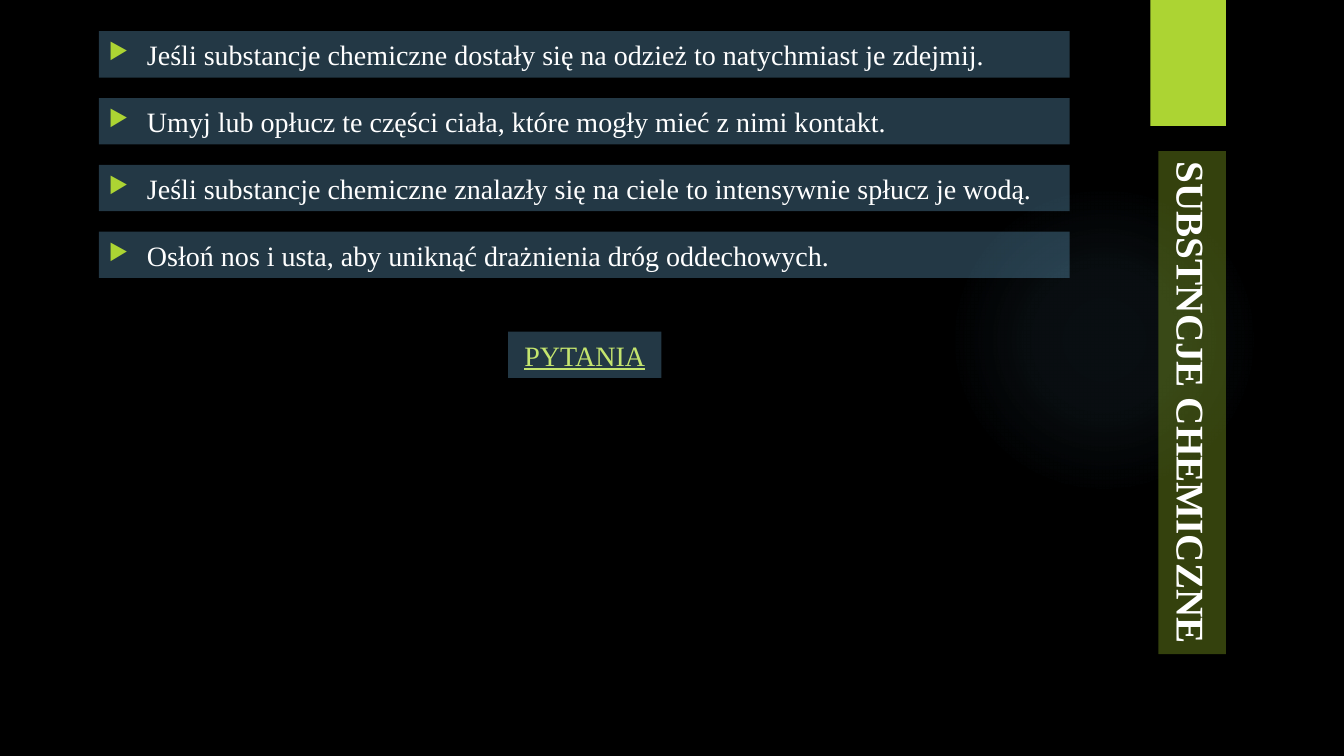
from lxml import etree
from pptx import Presentation
from pptx.dml.color import RGBColor
from pptx.enum.shapes import MSO_SHAPE
from pptx.enum.text import MSO_ANCHOR, PP_ALIGN
from pptx.oxml import parse_xml
from pptx.oxml.ns import qn
from pptx.util import Inches, Pt

RECTANGLE, OVAL = MSO_SHAPE.RECTANGLE, MSO_SHAPE.OVAL
LEFT, CENTER = PP_ALIGN.LEFT, PP_ALIGN.CENTER
MIDDLE = MSO_ANCHOR.MIDDLE
NAMESPACE = "http://schemas.openxmlformats.org/drawingml/2006/main"

COLORS = {
    "background": "000000",
    "blue": "7AC4F0",
    "lime": "ACD433",
    "olive": "83A322",
    "white": "FFFFFF",
    "link": "C4E46E",
}
BODY = {"name": "Times New Roman", "size": Pt(20)}
TITLE = {"name": "Times New Roman", "size": Pt(28), "bold": True}
LINK = {**BODY, "underline": True}

ADVICE = [
    "Jeśli substancje chemiczne dostały się na odzież to natychmiast je zdejmij.",
    "Umyj lub opłucz te części ciała, które mogły mieć z nimi kontakt.",
    "Jeśli substancje chemiczne znalazły się na ciele to intensywnie spłucz je wodą.",
    "Osłoń nos i usta, aby uniknąć drażnienia dróg oddechowych.",
]
ADVICE_TOP, ADVICE_PITCH = 0.31, 0.663

deck = Presentation()
deck.slide_width, deck.slide_height = Inches(13.33), Inches(7.5)
page = deck.slides.add_slide(deck.slide_layouts[6])
page.background.fill.solid()
page.background.fill.fore_color.rgb = RGBColor.from_string(COLORS["background"])


def add_box(kind, left, top, width, height, color, opacity=100):
    """Add a borderless shape; opacity is in percent."""
    box = page.shapes.add_shape(
        kind, Inches(left), Inches(top), Inches(width), Inches(height))
    box.shadow.inherit = False
    box.line.fill.background()
    box.fill.solid()
    box.fill.fore_color.rgb = RGBColor.from_string(COLORS[color])
    if opacity < 100:
        tint = box.fill._xPr.find(qn("a:solidFill"))[0]
        etree.SubElement(tint, qn("a:alpha"), val=str(opacity * 1000))
    return box


def write(box, text, color, font_values, alignment):
    """Write one paragraph, centred vertically, and return it."""
    frame = box.text_frame
    frame.word_wrap = True
    frame.vertical_anchor = MIDDLE
    para = frame.paragraphs[0]
    para.alignment = alignment
    span = para.add_run()
    span.text = text
    span.font.color.rgb = RGBColor.from_string(COLORS[color])
    for name, value in font_values.items():
        setattr(span.font, name, value)
    return para


# Soft glow and lime tab
glow = add_box(OVAL, 9.41, 1.83, 3.08, 3.08, "blue")
stops = "".join(
    f'<a:gs pos="{position * 1000}"><a:srgbClr val="{COLORS["blue"]}">'
    f'<a:alpha val="{opacity * 1000}"/></a:srgbClr></a:gs>'
    for position, opacity in [(0, 7), (36, 6), (69, 0), (100, 0)])
gradient = parse_xml(
    f'<a:gradFill xmlns:a="{NAMESPACE}"><a:gsLst>{stops}</a:gsLst>'
    '<a:path path="circle"><a:fillToRect l="50000" t="50000" r="50000" b="50000"/>'
    '</a:path></a:gradFill>')
properties = glow.fill._xPr
properties.replace(properties.find(qn("a:solidFill")), gradient)
add_box(RECTANGLE, 11.41, 0, 0.75, 1.25, "lime")

# Vertical title
title = add_box(RECTANGLE, 11.49, 1.5, 0.67, 4.99, "olive", 40)
write(title, "SUBSTNCJE CHEMICZNE", "white", TITLE, CENTER)
title.text_frame._txBody.bodyPr.set("vert", "vert")

# Bulleted advice
for index, text in enumerate(ADVICE):
    box = add_box(RECTANGLE, 0.98, ADVICE_TOP + index * ADVICE_PITCH,
                  9.63, 0.46, "blue", 29)
    para = write(box, text, "white", BODY, LEFT)
    settings = para._p.get_or_add_pPr()
    settings.set("marL", str(Inches(0.38)))
    settings.set("indent", str(-Inches(0.38)))
    bullet_color = etree.SubElement(settings, qn("a:buClr"))
    etree.SubElement(bullet_color, qn("a:srgbClr"), val=COLORS["lime"])
    etree.SubElement(settings, qn("a:buSzPct"), val="80000")
    etree.SubElement(settings, qn("a:buChar"), char="▶")

# Questions button
button = add_box(RECTANGLE, 5.04, 3.29, 1.52, 0.46, "blue", 29)
write(button, "PYTANIA", "link", LINK, CENTER)

deck.save("out.pptx")
